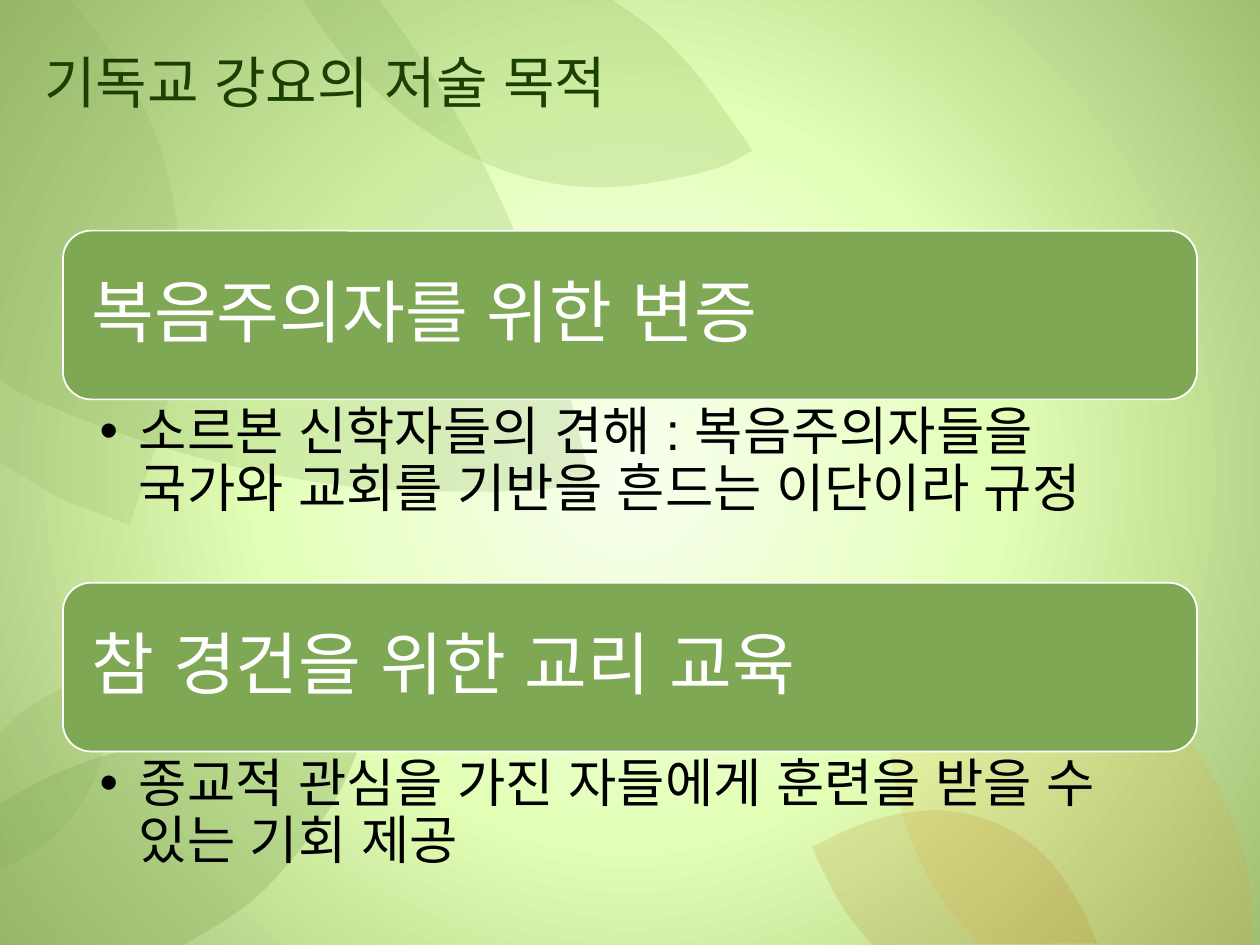
from lxml import etree
from pptx import Presentation
from pptx.dml.color import RGBColor
from pptx.enum.shapes import MSO_SHAPE
from pptx.enum.text import MSO_ANCHOR, MSO_AUTO_SIZE, PP_ALIGN
from pptx.oxml.ns import qn
from pptx.util import Pt

ROUNDED = MSO_SHAPE.ROUNDED_RECTANGLE
TOP, MIDDLE = MSO_ANCHOR.TOP, MSO_ANCHOR.MIDDLE
LEFT = PP_ALIGN.LEFT
NO_AUTOFIT = MSO_AUTO_SIZE.NONE
GREEN, ORANGE, BROWN = "7FA854", "FD8A03", "BE6802"
CURVE_STEPS = 6


def paint(fill, color, opacity=100):
    fill.solid()
    fill.fore_color.rgb = RGBColor.from_string(color)
    if opacity < 100:
        tint = fill.fore_color._xFill[0]
        etree.SubElement(tint, qn("a:alpha")).set("val", str(opacity * 1000))


def write(shape, text, size, color, font="Arial", anchor=TOP,
          insets=(7.2, 3.6, 7.2, 3.6), spacing=1.0, bullet=None, indent=0):
    frame = shape.text_frame
    frame.word_wrap = True
    frame.auto_size = NO_AUTOFIT
    frame.vertical_anchor = anchor
    frame.margin_left, frame.margin_top, frame.margin_right, frame.margin_bottom = map(Pt, insets)
    paragraph = frame.paragraphs[0]
    paragraph.alignment = LEFT
    paragraph.line_spacing = spacing
    if bullet:
        properties = paragraph._p.get_or_add_pPr()
        properties.set("marL", str(Pt(indent)))
        properties.set("indent", str(-Pt(indent)))
        etree.SubElement(properties, qn("a:buFont")).set("typeface", "Arial")
        etree.SubElement(properties, qn("a:buChar")).set("char", bullet)
    run = paragraph.add_run()
    run.text = text
    run.font.size = Pt(size)
    run.font.name = font
    paint(run.font.fill, color)
    run_properties = run.font._element
    run_properties.set("lang", "ko-KR")
    etree.SubElement(run_properties, qn("a:ea")).set("typeface", font)


prs = Presentation()
prs.slide_width, prs.slide_height = Pt(720), Pt(540)
slide = prs.slides.add_slide(prs.slide_layouts[5])

# Radial background
slide.background.fill.gradient()
gradient = slide.element.find(".//" + qn("a:gradFill"))
for child in list(gradient):
    gradient.remove(child)
stops = etree.SubElement(gradient, qn("a:gsLst"))
for position, color in [(0, "F8FFEE"), (33, "EAFFC9"), (47, "E2FFB5"), (100, "A2BE73")]:
    stop = etree.SubElement(stops, qn("a:gs"), pos=str(position * 1000))
    etree.SubElement(stop, qn("a:srgbClr"), val=color)
circle = etree.SubElement(gradient, qn("a:path"), path="circle")
etree.SubElement(circle, qn("a:fillToRect"), l="20000", t="30000", r="20000", b="30000")

# Leaves: colour, opacity, and edges; an edge of three or more points is a smooth curve
leaves = [
    (ORANGE, 10, [
        [(505, 366), (539, 364), (574, 366), (614, 377), (649, 395), (680, 424),
         (701, 460), (713, 498), (716, 540)],
        [(559, 539), (535, 509), (516, 467), (508, 422), (505, 366)]]),
    (BROWN, 15, [
        [(464, 484), (492, 471), (521, 464), (547, 464), (575, 473), (598, 490),
         (616, 515), (627, 539)],
        [(498, 540), (482, 519), (470, 497), (464, 484)]]),
    (GREEN, 15, [
        [(0, 264), (0, 0)],
        [(40, 0), (64, 30), (85, 67), (97, 104), (103, 146), (102, 184), (94, 238), (74, 300)],
        [(74, 300), (53, 292), (31, 283), (0, 264)]]),
    (GREEN, 20, [
        [(338, 277), (304, 280), (266, 281), (208, 279), (150, 270), (101, 258),
         (50, 241), (11, 224), (0, 216)],
        [(0, 216), (0, 0)],
        [(217, 0), (243, 37), (268, 78), (290, 123), (310, 173), (326, 228), (338, 277)]]),
    (GREEN, 20, [
        [(350, 0), (376, 19), (398, 42), (414, 63), (430, 86)],
        [(430, 86), (410, 96), (375, 104), (343, 107), (312, 104), (279, 94),
         (245, 76), (215, 52), (192, 27), (173, 0)]]),
    (GREEN, 17, [
        [(60, 384), (62, 405), (58, 433), (48, 457), (32, 477), (14, 490), (0, 497)],
        [(0, 419), (14, 406), (36, 393), (60, 384)]]),
    (GREEN, 30, [
        [(0, 540), (0, 459)],
        [(0, 459), (30, 443), (63, 431), (99, 423), (140, 421), (175, 425), (204, 430)],
        [(204, 430), (191, 458), (166, 492), (140, 518), (105, 540)]]),
]
for color, opacity, edges in leaves:
    outline = []
    for edge in edges:
        outline.append(edge[0])
        if len(edge) == 2:
            outline.append(edge[1])
            continue
        padded = [edge[0], *edge, edge[-1]]
        for a, b, c, d in zip(padded, padded[1:], padded[2:], padded[3:]):
            for step in range(1, CURVE_STEPS + 1):
                t = step / CURVE_STEPS
                # Catmull-Rom interpolation between b and c
                outline.append(tuple(
                    q + 0.5 * t * (r - p + t * (2 * p - 5 * q + 4 * r - s
                                                + t * (3 * (q - r) + s - p)))
                    for p, q, r, s in zip(a, b, c, d)))
    points = [(Pt(x), Pt(y)) for x, y in outline]
    builder = slide.shapes.build_freeform(*points[0])
    builder.add_line_segments(points[1:], close=True)
    leaf = builder.convert_to_shape()
    leaf.shadow.inherit = False
    leaf.line.fill.background()
    paint(leaf.fill, color, opacity)

# Title, brought in front of the leaves
title = slide.shapes.title
title.left, title.top, title.width, title.height = Pt(18), Pt(13.7), Pt(683.3), Pt(65.5)
write(title, "기독교 강요의 저술 목적", 32, "1C4001", font="Noto Sans CJK KR", anchor=MIDDLE)
slide.shapes._spTree.append(title.element)

# Purposes: a heading bar with its explanation below
purposes = [
    ("복음주의자를 위한 변증",
     "소르본 신학자들의 견해 : 복음주의자들을 국가와 교회를 기반을 흔드는 이단이라 규정"),
    ("참 경건을 위한 교리 교육",
     "종교적 관심을 가진 자들에게 훈련을 받을 수 있는 기회 제공"),
]
BAR_HEIGHT, DETAIL_HEIGHT = 96.4, 104.8
for index, (heading, explanation) in enumerate(purposes):
    top = 131.8 + index * (BAR_HEIGHT + DETAIL_HEIGHT)
    bar = slide.shapes.add_shape(ROUNDED, Pt(36), Pt(top), Pt(648), Pt(BAR_HEIGHT))
    bar.shadow.inherit = False
    paint(bar.fill, GREEN)
    paint(bar.line.fill, "FFFFFF")
    bar.line.width = Pt(1)
    write(bar, heading, 39, "FFFFFF", anchor=MIDDLE, insets=(11.5,) * 4, spacing=0.9)

    detail = slide.shapes.add_textbox(Pt(36), Pt(top + BAR_HEIGHT), Pt(648), Pt(DETAIL_HEIGHT))
    write(detail, explanation, 30, "000000", insets=(20.9, 3.6, 21.6, 3.6),
          spacing=0.9, bullet="•", indent=22.5)

prs.save("out.pptx")
